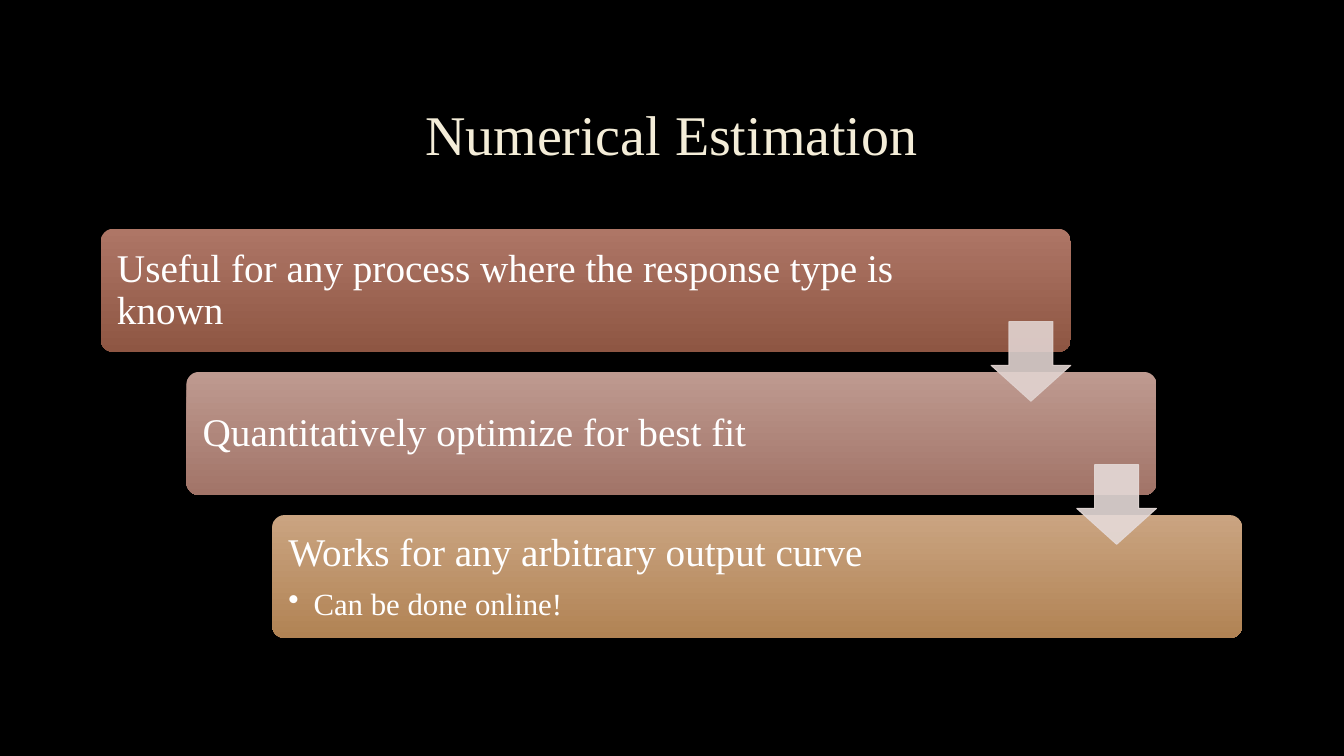
"""Build the Numerical Estimation slide with three stepped cards joined by arrows."""
from lxml.etree import SubElement
from pptx import Presentation
from pptx.dml.color import RGBColor
from pptx.enum.shapes import MSO_SHAPE as Preset
from pptx.enum.text import MSO_ANCHOR as Anchor, MSO_AUTO_SIZE as AutoSize, PP_ALIGN as Align
from pptx.oxml.ns import qn
from pptx.util import Pt

PX = 9144
FONT = "Times New Roman"
COLORS = {
    "background": "000000", "title": "F4EDD8", "text": "FFFFFF",
    "rust_top": "AE7666", "rust_bottom": "8E5643",
    "rose_top": "BE9A90", "rose_bottom": "A27468",
    "sand_top": "CAA481", "sand_bottom": "B18354",
    "first_arrow": "E1D3D0", "second_arrow": "E5DAD8",
}
CARDS = [
    ("rust", 831, ["Useful for any process where the response type is known"]),
    ("rose", 791, ["Quantitatively optimize for best fit"]),
    ("sand", 791, ["Works for any arbitrary output curve", "Can be done online!"]),
]
LEFT, TOP, STEP_X, STEP_Y = 100, 227, 85, 142
CARD_WIDTH, CARD_HEIGHT, ARROW_SIZE = 962, 122, 79


def box(left, top, width, height):
    return [value * PX for value in (left, top, width, height)]


def add_run(paragraph, text, size, color):
    paragraph.line_spacing = 0.9
    run = paragraph.add_run()
    run.text = text
    run.font.name = FONT
    run.font.size = Pt(size)
    run.font.color.rgb = RGBColor.from_string(COLORS[color])


presentation = Presentation()
presentation.slide_width, presentation.slide_height = 1333 * PX, 750 * PX
slide = presentation.slides.add_slide(presentation.slide_layouts[5])
slide.background.fill.solid()
slide.background.fill.fore_color.rgb = RGBColor.from_string(COLORS["background"])

title = slide.shapes.title
title.left, title.top, title.width, title.height = box(100, 67, 1132, 138)
title.text_frame.auto_size = AutoSize.NONE
title.text_frame.vertical_anchor = Anchor.MIDDLE
title.text_frame.paragraphs[0].alignment = Align.CENTER
add_run(title.text_frame.paragraphs[0], "Numerical Estimation", 40, "title")

steps = slide.shapes.add_group_shape().shapes
for index, (tone, text_width, lines) in enumerate(CARDS):
    left, top = LEFT + index * STEP_X, TOP + index * STEP_Y
    card = steps.add_shape(Preset.ROUNDED_RECTANGLE, *box(left, top, CARD_WIDTH, CARD_HEIGHT))
    card.adjustments[0] = 0.1
    card.shadow.inherit = False
    card.line.fill.background()
    card.fill.gradient()
    card.fill.gradient_angle = 270
    for stop, end in zip(card.fill.gradient_stops, ("top", "bottom")):
        stop.color.rgb = RGBColor.from_string(COLORS[f"{tone}_{end}"])

    label = steps.add_textbox(*box(left + 4, top + 4, text_width, 115))
    frame = label.text_frame
    frame.word_wrap = True
    frame.vertical_anchor = Anchor.MIDDLE
    frame.margin_left = frame.margin_right = frame.margin_top = frame.margin_bottom = 12 * PX
    add_run(frame.paragraphs[0], lines[0], 28, "text")
    for line in lines[1:]:
        frame.paragraphs[0].space_after = Pt(10)
        paragraph = frame.add_paragraph()
        paragraph.level = 1
        properties = paragraph._p.get_or_add_pPr()
        properties.set("marL", str(25 * PX))
        properties.set("indent", str(-25 * PX))
        SubElement(properties, qn("a:buChar")).set("char", "•")
        add_run(paragraph, line, 22, "text")

for index, tone in enumerate(("first_arrow", "second_arrow")):
    arrow = steps.add_shape(
        Preset.DOWN_ARROW,
        *box(LEFT + 883 + index * STEP_X, TOP + 92 + index * STEP_Y, ARROW_SIZE, ARROW_SIZE))
    arrow.adjustments[0], arrow.adjustments[1] = 0.55, 0.45
    arrow.shadow.inherit = False
    arrow.line.width = Pt(0.75)
    for fill in (arrow.fill, arrow.line.fill):
        fill.solid()
        fill.fore_color.rgb = RGBColor.from_string(COLORS[tone])
    for color in arrow.element.iter(qn("a:srgbClr")):
        SubElement(color, qn("a:alpha")).set("val", "90000")

presentation.save("out.pptx")
